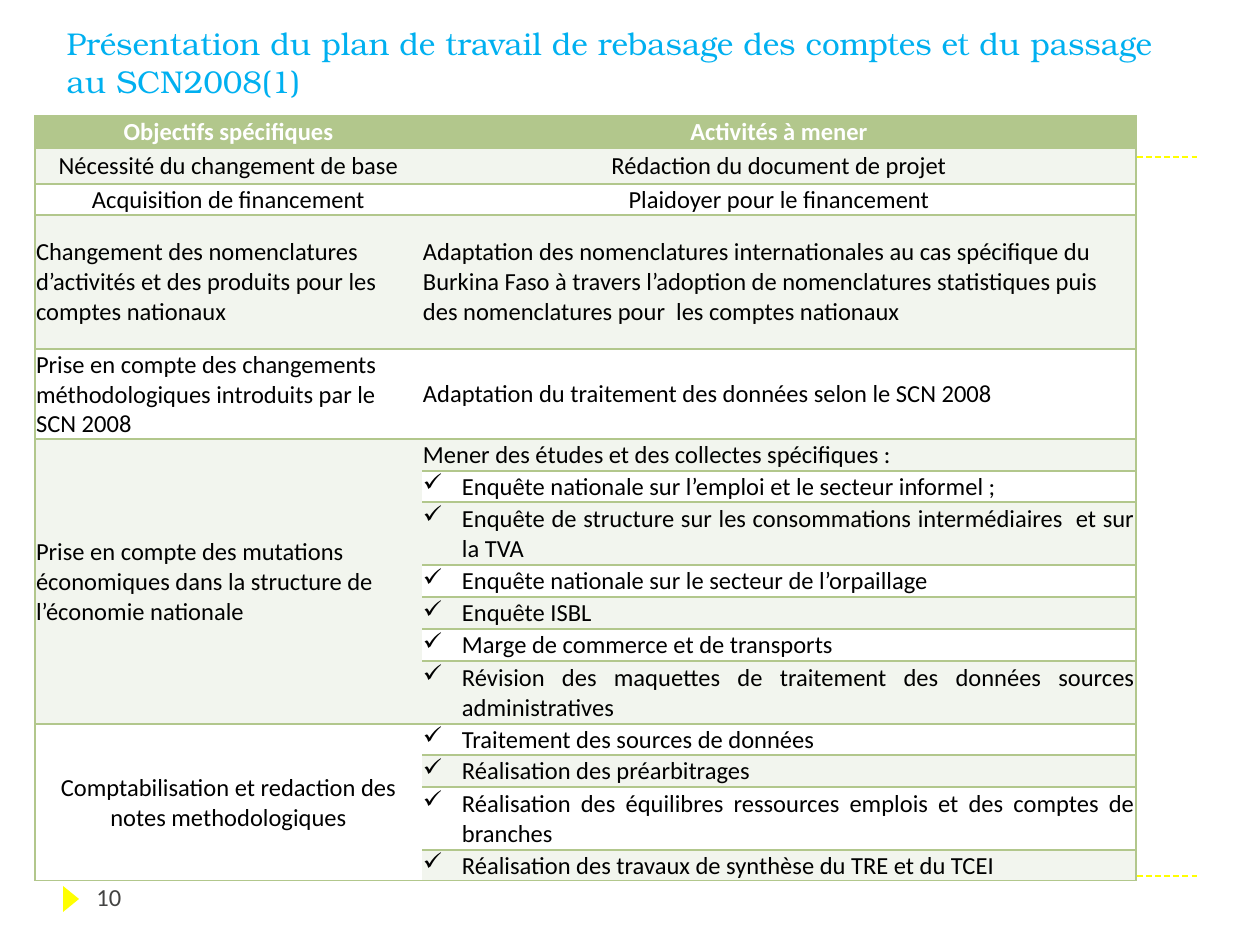
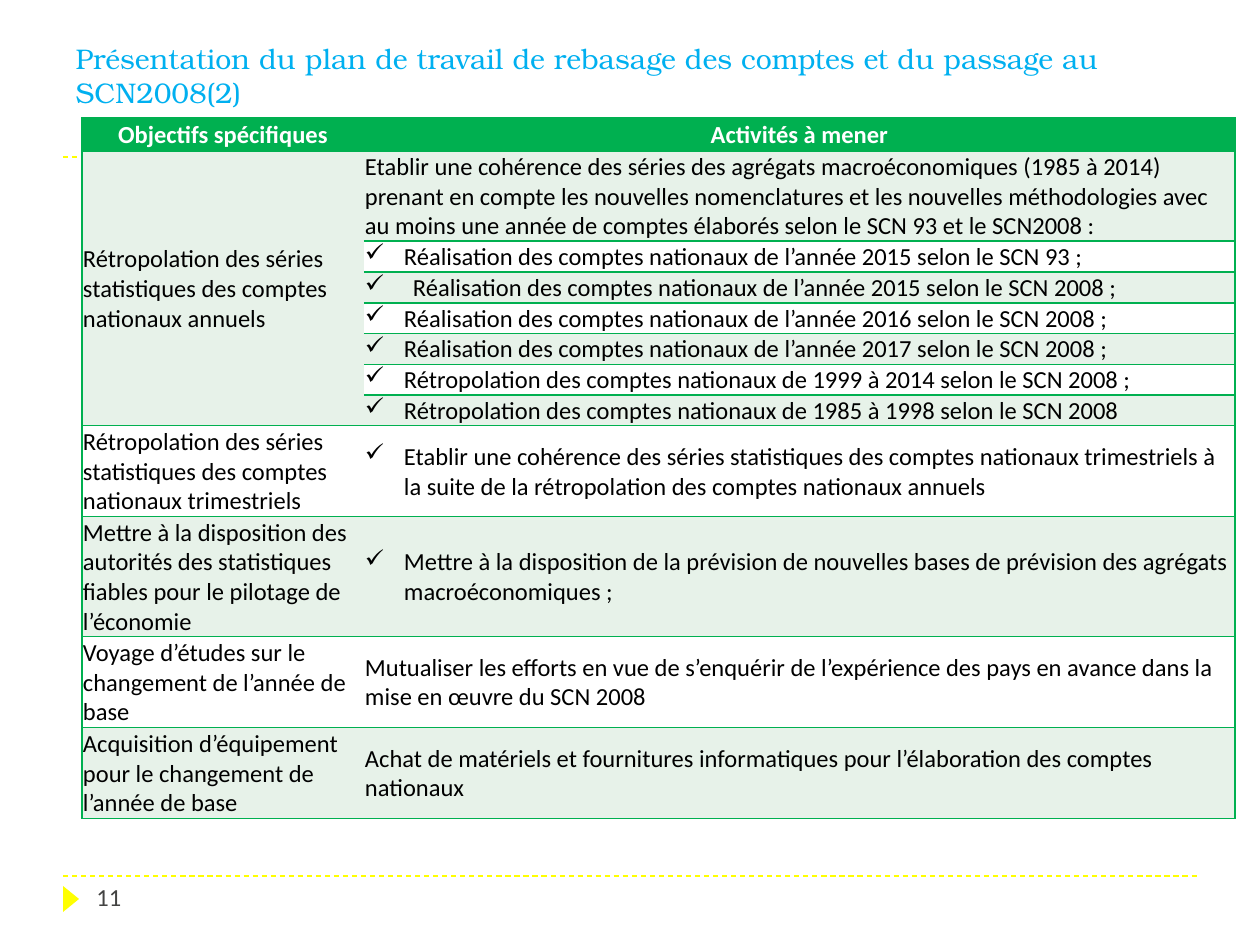
from pptx import Presentation
from pptx import util as u
from pptx.dml.color import RGBColor
from pptx.enum import dml, shapes, text
from pptx.oxml import ns
from lxml import etree

PX = u.Inches(1) / 126
COLORS = {"title": "00B0F0", "rule": "FFFF00", "number": "434342",
          "text": "000000", "white": "FFFFFF",
          "olive": "B2C78C", "olive_band": "F2F5EE",
          "green": "00B050", "green_band": "E7F2E9"}
BODY, HEADING = "Calibri", "TeX Gyre Bonum"
LEFT, CENTER, JUSTIFY = (text.PP_ALIGN.LEFT, text.PP_ALIGN.CENTER,
                         text.PP_ALIGN.JUSTIFY)
TITLE = "Présentation du plan de travail de rebasage des comptes et du passage au SCN2008"
HEADERS = ("Objectifs spécifiques", "Activités à mener")
BULLET_INDENT = 39

# Each group: objective, its alignment, plain activity, checked activities
PLAN_1 = [
    ("Nécessité du changement de base", CENTER,
     "Rédaction du document de projet", []),
    ("Acquisition de financement", CENTER, "Plaidoyer pour le financement", []),
    ("Changement des nomenclatures d’activités et des produits pour les comptes nationaux", LEFT,
     "Adaptation des nomenclatures internationales au cas spécifique du Burkina Faso à travers "
     "l’adoption de nomenclatures statistiques puis des nomenclatures pour  les comptes nationaux", []),
    ("Prise en compte des changements méthodologiques introduits par le SCN 2008", LEFT,
     "Adaptation du traitement des données selon le SCN 2008", []),
    ("Prise en compte des mutations économiques dans la structure de l’économie nationale", LEFT,
     "Mener des études et des collectes spécifiques :",
     ["Enquête nationale sur l’emploi et le secteur informel ;",
      "Enquête de structure sur les consommations intermédiaires  et sur la TVA",
      "Enquête nationale sur le secteur de l’orpaillage",
      "Enquête ISBL",
      "Marge de commerce et de transports",
      "Révision des maquettes de traitement des données sources administratives"]),
    ("Comptabilisation et redaction des notes methodologiques", CENTER, None,
     ["Traitement des sources de données",
      "Réalisation des préarbitrages",
      "Réalisation des équilibres ressources emplois et des comptes de branches",
      "Réalisation des travaux de synthèse du TRE et du TCEI"]),
]
PLAN_2 = [
    ("Rétropolation des séries statistiques des comptes nationaux annuels", LEFT,
     "Etablir une cohérence des séries des agrégats macroéconomiques (1985 à 2014) prenant en "
     "compte les nouvelles nomenclatures et les nouvelles méthodologies avec au moins une année "
     "de comptes élaborés selon le SCN 93 et le SCN2008 :",
     ["Réalisation des comptes nationaux de l’année 2015 selon le SCN 93 ;",
      "Réalisation des comptes nationaux de l’année 2015 selon le SCN 2008 ;",
      "Réalisation des comptes nationaux de l’année 2016 selon le SCN 2008 ;",
      "Réalisation des comptes nationaux de l’année 2017 selon le SCN 2008 ;",
      "Rétropolation des comptes nationaux de 1999 à 2014 selon le SCN 2008 ;",
      "Rétropolation des comptes nationaux de 1985 à 1998 selon le SCN 2008"]),
    ("Rétropolation des séries statistiques des comptes nationaux trimestriels", LEFT, None,
     ["Etablir une cohérence des séries statistiques des comptes nationaux trimestriels à la "
      "suite de la rétropolation des comptes nationaux annuels"]),
    ("Mettre à la disposition des autorités des statistiques fiables pour le pilotage de l’économie",
     LEFT, None,
     ["Mettre à la disposition de la prévision de nouvelles bases de prévision des agrégats "
      "macroéconomiques ;"]),
    ("Voyage d’études sur le changement de l’année de base", LEFT,
     "Mutualiser les efforts en vue de s’enquérir de l’expérience des pays en avance dans la "
     "mise en œuvre du SCN 2008", []),
    ("Acquisition d’équipement pour le changement de l’année de base", LEFT,
     "Achat de matériels et fournitures informatiques pour l’élaboration des comptes nationaux", []),
]


def px(*values):
    return [u.Emu(round(v * PX)) for v in values]


def rgb(name):
    return RGBColor.from_string(COLORS[name])


def write(tf, words, size, color, font=BODY, bold=False, align=LEFT):
    p = tf.paragraphs[0]
    p.alignment = align
    r = p.add_run()
    r.text = words
    for key, value in {"name": font, "size": u.Pt(size), "bold": bold}.items():
        setattr(r.font, key, value)
    r.font.color.rgb = rgb(color)
    return p


def sub(parent, tag, **attrs):
    return etree.SubElement(parent, ns.qn(tag), attrs)


def add_frame(s, number):
    # Dashed rules
    for y in (157, 876):
        x1, y1, x2, y2 = px(63, y, 1197, y)
        line = s.shapes.add_connector(shapes.MSO_CONNECTOR.STRAIGHT, x1, y1, x2, y2)
        line.line.color.rgb = rgb("rule")
        line.line.width = u.Pt(0.75)
        line.line.dash_style = dml.MSO_LINE.DASH
        sub(line._element.spPr, "a:effectLst")
    # Page marker and number
    sp = s.shapes.add_shape(shapes.MSO_SHAPE.ISOSCELES_TRIANGLE, *px(58, 891, 26, 16))
    sp.rotation = 90
    sp.shadow.inherit = False
    sp.fill.solid()
    sp.fill.fore_color.rgb = rgb("rule")
    sp.line.fill.background()
    tf = s.shapes.add_textbox(*px(84, 876, 273, 50)).text_frame
    tf.word_wrap = True
    write(tf, str(number), 14, "number")


def add_title(s, box, words, size):
    sp = s.shapes.title
    sp.left, sp.top, sp.width, sp.height = px(*box)
    tf = sp.text_frame
    tf.auto_size = text.MSO_AUTO_SIZE.NONE
    tf.vertical_anchor = text.MSO_ANCHOR.BOTTOM
    write(tf, words, size, "title", HEADING)


def style_cell(cell, fill, border, col):
    margins = zip(("left", "top", "right", "bottom"), px(1, 1, 1, 0))
    for side, value in margins:
        setattr(cell, f"margin_{side}", value)
    cell.vertical_anchor = text.MSO_ANCHOR.MIDDLE
    # The edge between the two columns stays open
    tc_pr = cell._tc.get_or_add_tcPr()
    for side in "LRTB":
        ln = sub(tc_pr, f"a:ln{side}", w="12700")
        if side == "RL"[col]:
            sub(ln, "a:noFill")
        else:
            sub(sub(ln, "a:solidFill"), "a:srgbClr", val=COLORS[border])
    cell.fill.solid()
    cell.fill.fore_color.rgb = rgb(fill)


def add_check(p, indent):
    p_pr = p._p.get_or_add_pPr()
    width = px(indent)[0]
    p_pr.set("marL", str(width))
    p_pr.set("indent", str(-width))
    sub(p_pr, "a:buChar", char="✓")


def add_plan(s, corner, widths, heights, accent, groups, item_align, indents):
    size = sum(widths), sum(heights)
    table = s.shapes.add_table(len(heights), 2, *px(*corner, *size)).table
    table.first_row = table.horz_banding = False
    for column, width in zip(table.columns, px(*widths)):
        column.width = width
    for row, height in zip(table.rows, px(*heights)):
        row.height = height
    # Header and alternating bands
    for i in range(len(heights)):
        fill = accent if i == 0 else f"{accent}_band" if i % 2 else "white"
        for col in range(2):
            style_cell(table.cell(i, col), fill, accent, col)
    for col, header in enumerate(HEADERS):
        write(table.cell(0, col).text_frame, header, 14, "white", bold=True, align=CENTER)
    # Objectives with their activities
    i = 1
    for goal, align, lead, items in groups:
        first = i
        write(table.cell(first, 0).text_frame, goal, 14, "text", align=align)
        if lead:
            write(table.cell(i, 1).text_frame, lead, 14, "text", align=align)
            i += 1
        for item in items:
            p = write(table.cell(i, 1).text_frame, item, 14, "text", align=item_align)
            add_check(p, indents.get(i, BULLET_INDENT))
            i += 1
        if i - first > 1:
            table.cell(first, 0).merge(table.cell(i - 1, 0))


def add_plan_slide(prs, number, title, title_box, title_size, **plan):
    s = prs.slides.add_slide(prs.slide_layouts[5])
    add_frame(s, number)
    add_title(s, title_box, title, title_size)
    add_plan(s, **plan)


def main():
    prs = Presentation()
    prs.slide_width, prs.slide_height = px(1260, 945)
    add_plan_slide(
        prs, 10, f"{TITLE}(1)", (54, 15, 1134, 91), 18,
        corner=(35, 116), widths=(387, 714),
        heights=(32, 36, 31, 134, 90, 32, 31, 63, 32, 32, 32, 63, 31, 32, 63, 31),
        accent="olive", groups=PLAN_1, item_align=JUSTIFY, indents={})
    add_plan_slide(
        prs, 11, f"{TITLE}(2)", (63, 32, 1134, 84), 16.2,
        corner=(82, 118), widths=(282, 871),
        heights=(33, 90, 31, 31, 30, 31, 30, 31, 91, 120, 91, 91),
        accent="green", groups=PLAN_2, item_align=LEFT, indents={3: 48})
    prs.save("out.pptx")


if __name__ == "__main__":
    main()
